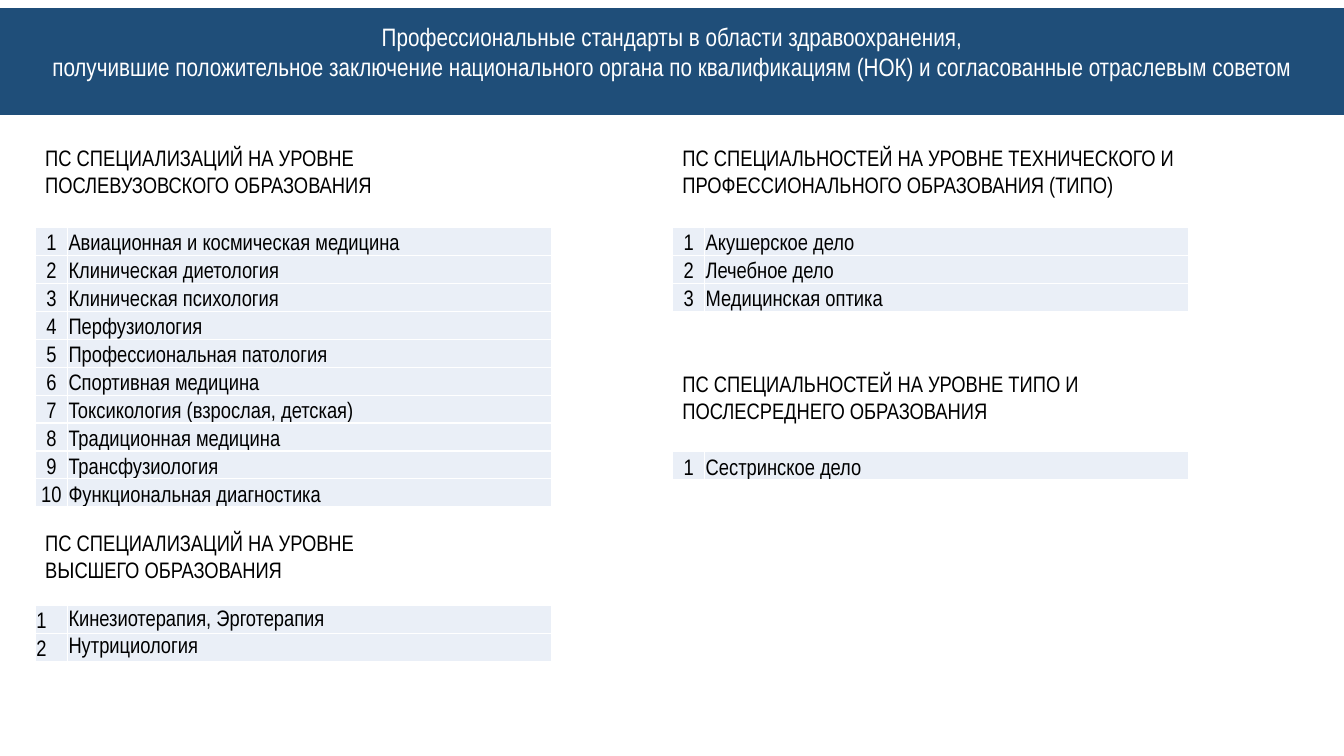
from dataclasses import dataclass

from lxml import etree
from pptx import Presentation
from pptx.dml.color import RGBColor
from pptx.enum.shapes import MSO_SHAPE
from pptx.enum.text import MSO_ANCHOR, PP_ALIGN
from pptx.oxml.ns import qn
from pptx.util import Inches, Pt

RECTANGLE = MSO_SHAPE.RECTANGLE
LEFT, CENTER = PP_ALIGN.LEFT, PP_ALIGN.CENTER
TOP, MIDDLE, BOTTOM = MSO_ANCHOR.TOP, MSO_ANCHOR.MIDDLE, MSO_ANCHOR.BOTTOM


@dataclass(frozen=True)
class Theme:
    font: str = "Arial Narrow"
    banner: RGBColor = RGBColor(0x1F, 0x4E, 0x79)
    cell: RGBColor = RGBColor(0xEA, 0xEF, 0xF7)
    white: RGBColor = RGBColor(0xFF, 0xFF, 0xFF)
    black: RGBColor = RGBColor(0, 0, 0)
    title_size: Pt = Pt(18)
    body_size: Pt = Pt(16)
    border: Pt = Pt(1)


THEME = Theme()


def style_text(tf, size, color, align):
    for p in tf.paragraphs:
        p.alignment = align
        for r in p.runs:
            r.font.name = THEME.font
            r.font.size = size
            r.font.color.rgb = color


def style_cell(cell, align, anchor):
    """Set the margins, borders, fill and text of a table cell."""
    cell.margin_left = cell.margin_right = cell.margin_top = Inches(0.01)
    cell.margin_bottom = 0
    cell.vertical_anchor = anchor
    tc_pr = cell._tc.get_or_add_tcPr()
    for side in ("a:lnL", "a:lnR", "a:lnT", "a:lnB"):
        ln = etree.SubElement(tc_pr, qn(side), w=str(THEME.border))
        fill = etree.SubElement(ln, qn("a:solidFill"))
        etree.SubElement(fill, qn("a:srgbClr"), val=str(THEME.white))
    cell.fill.solid()
    cell.fill.fore_color.rgb = THEME.cell
    style_text(cell.text_frame, THEME.body_size, THEME.black, align)


prs = Presentation()
prs.slide_width, prs.slide_height = Inches(13.33), Inches(7.5)
s = prs.slides.add_slide(prs.slide_layouts[6])

# Title banner
banner = s.shapes.add_shape(RECTANGLE, 0, Inches(0.08), prs.slide_width, Inches(1.06))
banner.shadow.inherit = False
banner.fill.solid()
banner.fill.fore_color.rgb = THEME.banner
banner.line.fill.background()
tf = banner.text_frame
tf.margin_left = tf.margin_right = tf.margin_bottom = 0
tf.margin_top = Inches(0.13)
tf.vertical_anchor = TOP
tf.text = (
    "Профессиональные стандарты в области здравоохранения,\n"
    "получившие положительное заключение национального органа по квалификациям (НОК) "
    "и согласованные отраслевым советом"
)
style_text(tf, THEME.title_size, THEME.white, CENTER)

# Lists of standards
LEFT_X, RIGHT_X = 0.35, 6.67
NUMBER_W, NAME_W = 0.32, 4.8
TABLE_W = NUMBER_W + NAME_W

# x, heading top, heading width, table top, table height,
# number alignment, name anchor, heading, names
sections = [
    (LEFT_X, 1.38, TABLE_W, 2.26, 2.77, CENTER, BOTTOM,
     "ПС СПЕЦИАЛИЗАЦИЙ НА УРОВНЕ ПОСЛЕВУЗОВСКОГО ОБРАЗОВАНИЯ",
     ["Авиационная и космическая медицина", "Клиническая диетология",
      "Клиническая психология", "Перфузиология", "Профессиональная патология",
      "Спортивная медицина", "Токсикология (взрослая, детская)",
      "Традиционная медицина", "Трансфузиология", "Функциональная диагностика"]),
    (RIGHT_X, 1.38, TABLE_W, 2.26, 0.83, CENTER, BOTTOM,
     "ПС СПЕЦИАЛЬНОСТЕЙ НА УРОВНЕ ТЕХНИЧЕСКОГО И ПРОФЕССИОНАЛЬНОГО ОБРАЗОВАНИЯ (ТИПО)",
     ["Акушерское дело", "Лечебное дело", "Медицинская оптика"]),
    (RIGHT_X, 3.62, TABLE_W, 4.48, 0.28, CENTER, BOTTOM,
     "ПС СПЕЦИАЛЬНОСТЕЙ НА УРОВНЕ ТИПО И ПОСЛЕСРЕДНЕГО ОБРАЗОВАНИЯ",
     ["Сестринское дело"]),
    (LEFT_X, 5.2, 3.75, 6.01, 0.55, LEFT, MIDDLE,
     "ПС СПЕЦИАЛИЗАЦИЙ НА УРОВНЕ ВЫСШЕГО ОБРАЗОВАНИЯ",
     ["Кинезиотерапия, Эрготерапия", "Нутрициология"]),
]

for (x, heading_y, heading_w, table_y, table_h,
     number_align, name_anchor, heading, names) in sections:
    box = s.shapes.add_textbox(Inches(x), Inches(heading_y), Inches(heading_w), Inches(0.64))
    tf = box.text_frame
    tf.word_wrap = True
    tf.text = heading
    style_text(tf, THEME.body_size, THEME.black, LEFT)

    table = s.shapes.add_table(len(names), 2, Inches(x), Inches(table_y),
                               Inches(TABLE_W), Inches(table_h)).table
    table.first_row = table.horz_banding = False
    table.columns[0].width = Inches(NUMBER_W)
    table.columns[1].width = Inches(NAME_W)
    for row, name in enumerate(names):
        number_cell, name_cell = table.cell(row, 0), table.cell(row, 1)
        number_cell.text = str(row + 1)
        name_cell.text = name
        style_cell(number_cell, number_align, BOTTOM)
        style_cell(name_cell, LEFT, name_anchor)

prs.save("out.pptx")
